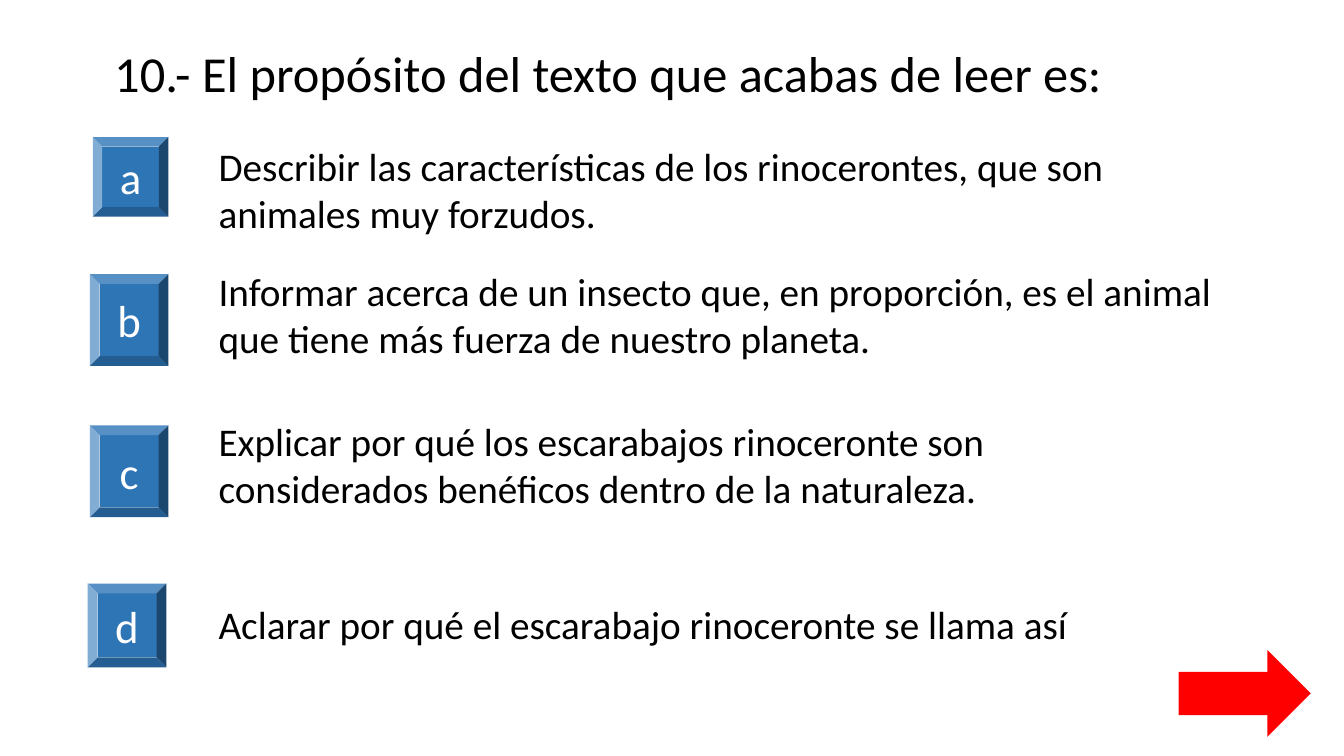
"""Build the quiz slide about the purpose of the text, with four lettered answers."""
import pptx
import pptx.util
import pptx.dml.color
import pptx.enum.shapes
import pptx.enum.text

Inches = pptx.util.Inches
MSO_SHAPE = pptx.enum.shapes.MSO_SHAPE
MSO_ANCHOR = pptx.enum.text.MSO_ANCHOR
PP_ALIGN = pptx.enum.text.PP_ALIGN


def paint(color_format, hex_color):
    color_format.rgb = pptx.dml.color.RGBColor.from_string(hex_color)


def write(frame, text, size, hex_color, align, anchor):
    frame.text = text
    frame.word_wrap = True
    frame.vertical_anchor = anchor
    paragraph = frame.paragraphs[0]
    paragraph.alignment = align
    font = paragraph.runs[0].font
    font.name = "Calibri"
    font.size = pptx.util.Pt(size)
    paint(font.color, hex_color)


presentation = pptx.Presentation()
presentation.slide_width = Inches(13.33)
presentation.slide_height = Inches(7.5)
slide = presentation.slides.add_slide(presentation.slide_layouts[5])

question = slide.shapes.title
question.left, question.top = Inches(0.92), Inches(0.4)
question.width, question.height = Inches(11.5), Inches(0.72)
write(question.text_frame, " 10.- El propósito del texto que acabas de leer es:",
      36, "000000", PP_ALIGN.LEFT, MSO_ANCHOR.MIDDLE)
question.text_frame.paragraphs[0].line_spacing = 0.9

answers = [
    ("a", (0.92, 1.36, 0.75, 0.79), (1.36, 8.98, 1.04),
     "Describir las características de los rinocerontes, que son animales muy forzudos."),
    ("b", (0.89, 2.72, 0.78, 0.91), (2.6, 10.07, 1.04),
     "Informar acerca de un insecto que, en proporción, es el animal que tiene más fuerza de nuestro planeta."),
    ("c", (0.89, 4.22, 0.78, 0.91), (4.09, 9.8, 1.04),
     "Explicar por qué los escarabajos rinoceronte son considerados benéficos dentro de la naturaleza."),
    ("d", (0.87, 5.79, 0.78, 0.83), (5.91, 9.33, 0.57),
     "Aclarar por qué el escarabajo rinoceronte se llama así"),
]
for letter, button_box, (top, width, height), answer in answers:
    button = slide.shapes.add_shape(MSO_SHAPE.BEVEL, *map(Inches, button_box))
    button.shadow.inherit = False
    button.fill.solid()
    paint(button.fill.fore_color, "2E75B6")
    button.line.fill.background()
    write(button.text_frame, letter, 32, "FFFFFF", PP_ALIGN.CENTER, MSO_ANCHOR.MIDDLE)

    option = slide.shapes.add_textbox(Inches(2.07), Inches(top), Inches(width), Inches(height))
    write(option.text_frame, answer, 28, "000000", PP_ALIGN.LEFT, MSO_ANCHOR.TOP)
    option.text_frame.auto_size = pptx.enum.text.MSO_AUTO_SIZE.SHAPE_TO_FIT_TEXT

next_arrow = slide.shapes.add_shape(
    MSO_SHAPE.RIGHT_ARROW, Inches(11.69), Inches(6.45), Inches(1.31), Inches(0.86))
next_arrow.shadow.inherit = False
next_arrow.fill.solid()
paint(next_arrow.fill.fore_color, "FF0000")
next_arrow.line.fill.background()

presentation.save("out.pptx")
